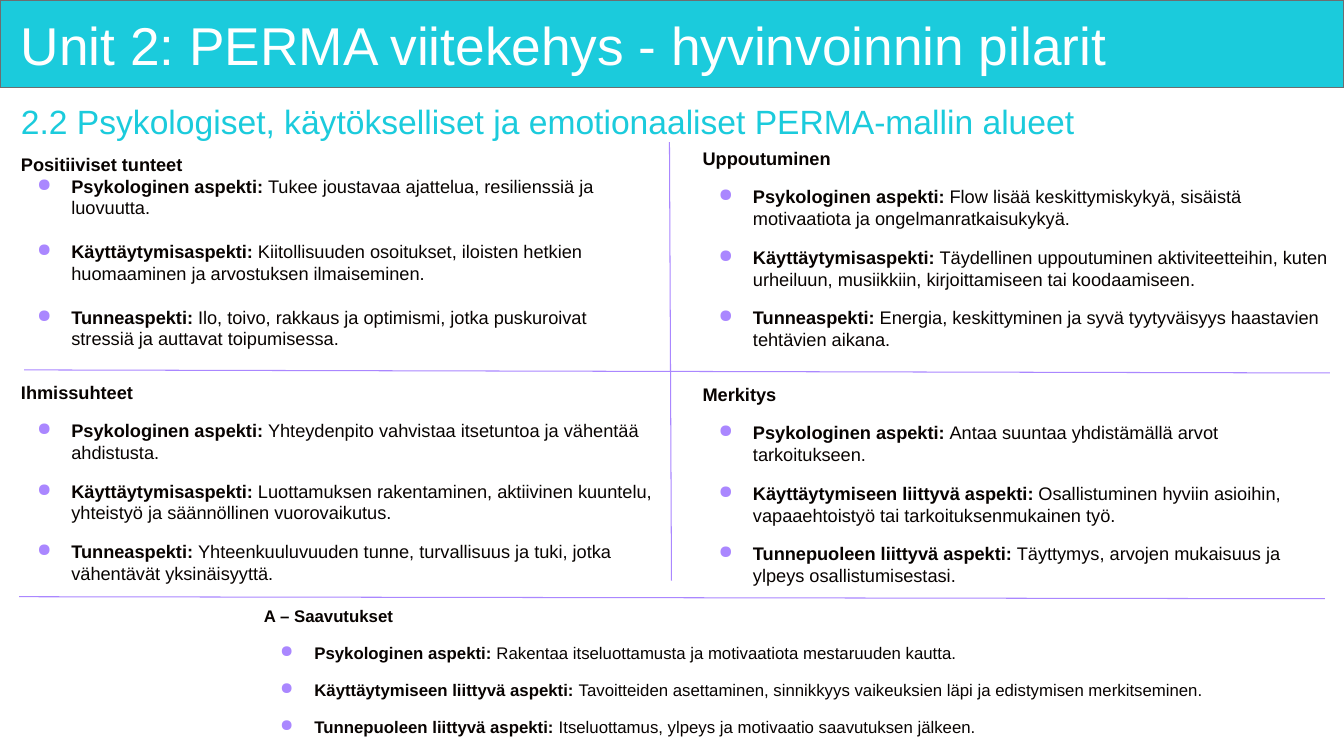
from dataclasses import dataclass

from lxml import etree
from pptx import Presentation
from pptx.dml.color import RGBColor
from pptx.enum.shapes import MSO_CONNECTOR, MSO_SHAPE
from pptx.enum.text import MSO_ANCHOR, PP_ALIGN
from pptx.oxml.ns import qn
from pptx.util import Inches, Pt

STRAIGHT = MSO_CONNECTOR.STRAIGHT
RECTANGLE = MSO_SHAPE.RECTANGLE
MIDDLE = MSO_ANCHOR.MIDDLE
TOP = MSO_ANCHOR.TOP
JUSTIFY = PP_ALIGN.JUSTIFY

COLORS = {
    "band": "1BCBDC",
    "band_line": "6C6E70",
    "title": "FFFFFF",
    "text": "080301",
    "accent": "AA87FF",
}
FONT = "Arial"
LEFT_COLUMN, RIGHT_COLUMN = 0.11, 6.87
COLUMN_WIDTH = 6.46
LINE_FACTOR = 1.2


@dataclass(frozen=True)
class Panel:
    heading: str
    left: float
    top: float
    aspects: tuple[tuple[str, str], ...]
    width: float = COLUMN_WIDTH
    height: float = 2.15
    size: int = 13
    first_gap: float = 12
    gap: float = 12


@dataclass(frozen=True)
class Divider:
    start: tuple[float, float]
    end: tuple[float, float]


PANELS = (
    Panel("Positiiviset tunteet", LEFT_COLUMN, 1.47, (
        ("Psykologinen aspekti",
         "Tukee joustavaa ajattelua, resilienssiä ja luovuutta."),
        ("Käyttäytymisaspekti",
         "Kiitollisuuden osoitukset, iloisten hetkien huomaaminen ja arvostuksen ilmaiseminen."),
        ("Tunneaspekti",
         "Ilo, toivo, rakkaus ja optimismi, jotka puskuroivat stressiä ja auttavat toipumisessa."),
    ), height=2.33, first_gap=0, gap=15.6),
    Panel("Ihmissuhteet", LEFT_COLUMN, 3.73, (
        ("Psykologinen aspekti",
         "Yhteydenpito vahvistaa itsetuntoa ja vähentää ahdistusta."),
        ("Käyttäytymisaspekti",
         "Luottamuksen rakentaminen, aktiivinen kuuntelu, yhteistyö ja säännöllinen vuorovaikutus."),
        ("Tunneaspekti",
         "Yhteenkuuluvuuden tunne, turvallisuus ja tuki, jotka vähentävät yksinäisyyttä."),
    )),
    Panel("Uppoutuminen", RIGHT_COLUMN, 1.41, (
        ("Psykologinen aspekti",
         "Flow lisää keskittymiskykyä, sisäistä motivaatiota ja ongelmanratkaisukykyä."),
        ("Käyttäytymisaspekti",
         "Täydellinen uppoutuminen aktiviteetteihin, kuten urheiluun, musiikkiin, "
         "kirjoittamiseen tai koodaamiseen."),
        ("Tunneaspekti",
         "Energia, keskittyminen ja syvä tyytyväisyys haastavien tehtävien aikana."),
    )),
    Panel("Merkitys", RIGHT_COLUMN, 3.75, (
        ("Psykologinen aspekti",
         "Antaa suuntaa yhdistämällä arvot tarkoitukseen."),
        ("Käyttäytymiseen liittyvä aspekti",
         "Osallistuminen hyviin asioihin, vapaaehtoistyö tai tarkoituksenmukainen työ."),
        ("Tunnepuoleen liittyvä aspekti",
         "Täyttymys, arvojen mukaisuus ja ylpeys osallistumisestasi."),
    )),
    Panel("A – Saavutukset", 2.52, 5.96, (
        ("Psykologinen aspekti",
         "Rakentaa itseluottamusta ja motivaatiota mestaruuden kautta."),
        ("Käyttäytymiseen liittyvä aspekti",
         "Tavoitteiden asettaminen, sinnikkyys vaikeuksien läpi ja edistymisen merkitseminen."),
        ("Tunnepuoleen liittyvä aspekti",
         "Itseluottamus, ylpeys ja motivaatio saavutuksen jälkeen."),
    ), width=9.63, height=1.54, size=12),
)

DIVIDERS = (
    Divider((0.24, 3.67), (13.19, 3.7)),
    Divider((6.64, 1.41), (6.66, 5.76)),
    Divider((0.19, 5.92), (13.14, 5.94)),
)


def rgb(name: str) -> RGBColor:
    return RGBColor.from_string(COLORS[name])


def add_span(para, text: str, size: float, color: str = "text", bold: bool = False) -> None:
    span = para.add_run()
    span.text = text
    span.font.name = FONT
    span.font.size = Pt(size)
    span.font.bold = bold
    span.font.color.rgb = rgb(color)


def add_box(page, left: float, top: float, width: float, height: float, anchor=TOP):
    """Add a wrapping text box and return its text frame."""
    box = page.shapes.add_textbox(Inches(left), Inches(top), Inches(width), Inches(height))
    frame = box.text_frame
    frame.word_wrap = True
    frame.vertical_anchor = anchor
    return frame


def add_bullet(para) -> None:
    properties = para._p.get_or_add_pPr()
    properties.set("marL", str(Inches(0.5)))
    properties.set("indent", str(Inches(-0.34)))
    bullet_color = etree.SubElement(properties, qn("a:buClr"))
    etree.SubElement(bullet_color, qn("a:srgbClr"), val=COLORS["accent"])
    etree.SubElement(properties, qn("a:buChar"), char="●")


def add_panel(page, panel: Panel) -> None:
    frame = add_box(page, panel.left, panel.top, panel.width, panel.height)
    line_height = Pt(panel.size * LINE_FACTOR)
    heading = frame.paragraphs[0]
    heading.line_spacing = line_height
    add_span(heading, panel.heading, panel.size, bold=True)
    for index, (label, description) in enumerate(panel.aspects):
        para = frame.add_paragraph()
        para.line_spacing = line_height
        para.space_before = Pt(panel.gap if index else panel.first_gap)
        add_bullet(para)
        add_span(para, f"{label}: ", panel.size, bold=True)
        add_span(para, description, panel.size)


def add_divider(page, divider: Divider) -> None:
    ends = (Inches(value) for value in divider.start + divider.end)
    line = page.shapes.add_connector(STRAIGHT, *ends)
    line.line.color.rgb = rgb("accent")
    line.line.width = Pt(0.75)
    etree.SubElement(line._element.spPr, qn("a:effectLst"))


def add_header(page) -> None:
    """Draw the title band, the title and the subtitle."""
    band = page.shapes.add_shape(RECTANGLE, 0, 0, Inches(13.33), Inches(0.87))
    band.shadow.inherit = False
    band.fill.solid()
    band.fill.fore_color.rgb = rgb("band")
    band.line.color.rgb = rgb("band_line")
    band.line.width = Pt(1)

    title = add_box(page, 0.11, 0.09, 13.06, 0.78, MIDDLE)
    title.margin_top = title.margin_right = title.margin_bottom = Inches(0.06)
    title.paragraphs[0].line_spacing = 0.9
    add_span(title.paragraphs[0], "Unit 2: PERMA viitekehys - hyvinvoinnin pilarit", 38, "title")

    subtitle = add_box(page, 0.11, 0.93, 13.06, 0.6, MIDDLE).paragraphs[0]
    subtitle.alignment = JUSTIFY
    subtitle.line_spacing = 0.9
    add_span(subtitle, "2.2 Psykologiset, käytökselliset ja emotionaaliset PERMA-mallin alueet",
             24, "band")


def main() -> None:
    deck = Presentation()
    deck.slide_width = Inches(13.33)
    deck.slide_height = Inches(7.5)
    page = deck.slides.add_slide(deck.slide_layouts[6])
    add_header(page)
    for panel in PANELS:
        add_panel(page, panel)
    for divider in DIVIDERS:
        add_divider(page, divider)
    deck.save("out.pptx")


if __name__ == "__main__":
    main()
